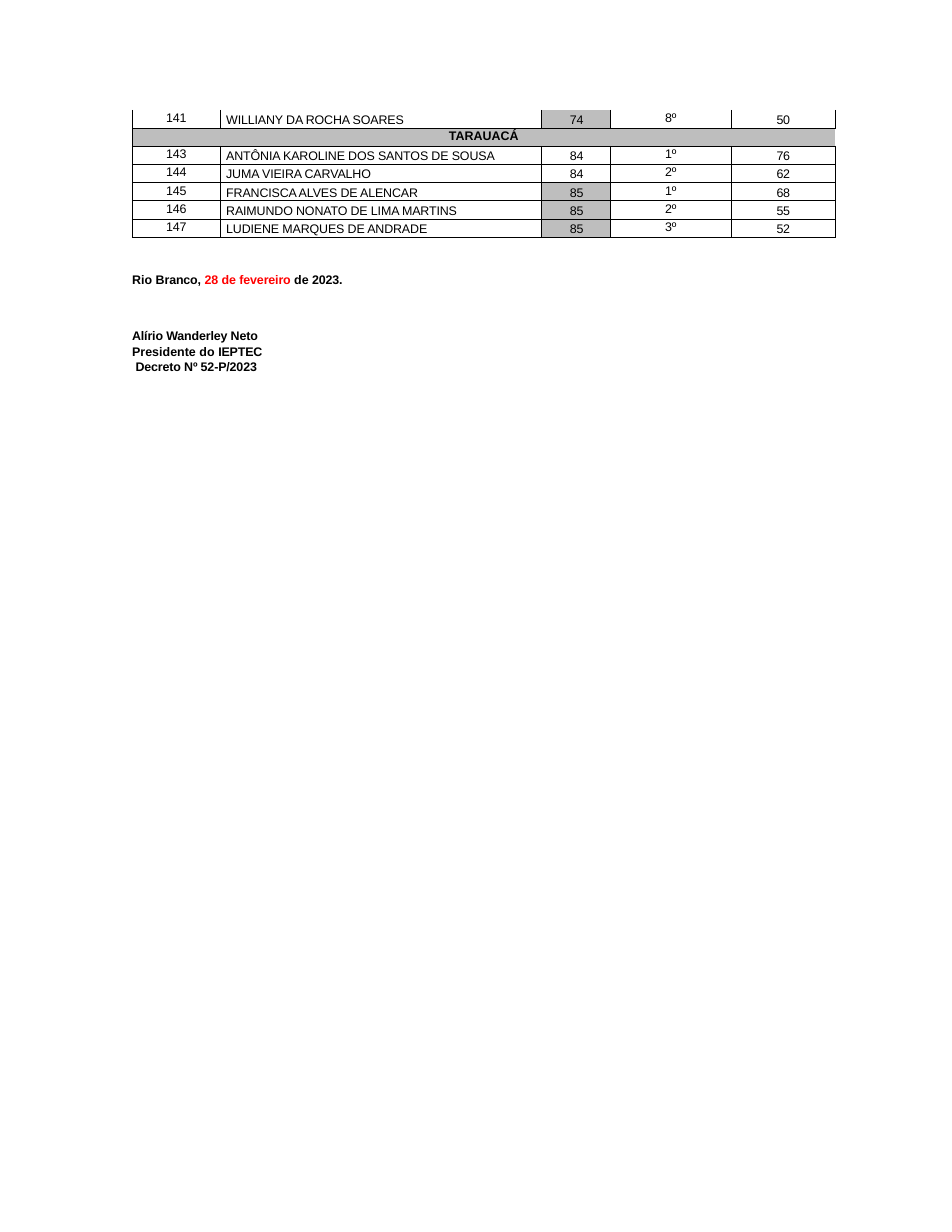
from lxml import etree
from pptx import Presentation
from pptx import util as u
from pptx.dml.color import RGBColor
from pptx.enum import text
from pptx.oxml.ns import qn

COLORS = {"ink": "000000", "red": "FF0000", "gray": "BEBEBE"}
COLS, ROWS = 85, 110
WIDTHS = [7.9, 28.6, 6.2, 10.8, 9.3]
CENTER, LEFT, RIGHT = text.PP_ALIGN.CENTER, text.PP_ALIGN.LEFT, text.PP_ALIGN.RIGHT
ALIGNS = [CENTER, LEFT, RIGHT, CENTER, CENTER]
PEOPLE = [
    ("141", "WILLIANY DA ROCHA SOARES", "74", "8º", "50"),
    ("TARAUACÁ",),
    ("143", "ANTÔNIA KAROLINE DOS SANTOS DE SOUSA", "84", "1º", "76"),
    ("144", "JUMA VIEIRA CARVALHO", "84", "2º", "62"),
    ("145", "FRANCISCA ALVES DE ALENCAR", "85", "1º", "68"),
    ("146", "RAIMUNDO NONATO DE LIMA MARTINS", "85", "2º", "55"),
    ("147", "LUDIENE MARQUES DE ANDRADE", "85", "3º", "52"),
]
SHADED = {"141", "145", "146", "147"}


class Page:
    """Holds the text style and the current slide, measured on a grid of columns and rows."""

    def __init__(self, prs):
        self.prs = prs
        self.s = prs.slides.add_slide(prs.slide_layouts[6])
        self.font = {"name": "Arial", "size": u.Pt(8)}

    def x(self, cols):
        return round(self.prs.slide_width * cols / COLS)

    def y(self, rows):
        return round(self.prs.slide_height * rows / ROWS)

    def apply(self, obj, values):
        for name, value in values.items():
            setattr(obj, name, value)

    def run(self, p, words, color="ink", bold=False, spc=-10):
        r = p.add_run()
        r.text = words
        self.apply(r.font, {**self.font, "bold": bold})
        r.font.color.rgb = RGBColor.from_string(COLORS[color])
        r._r.get_or_add_rPr().set("spc", str(spc))

    def text_box(self, at, paragraphs):
        left, top, width, height = at
        sp = self.s.shapes.add_textbox(self.x(left), self.y(top), self.x(width), self.y(height))
        tf = sp.text_frame
        self.apply(tf, {"word_wrap": True, "margin_left": 0, "margin_right": 0,
                        "margin_top": self.y(0.1), "margin_bottom": 0,
                        "auto_size": text.MSO_AUTO_SIZE.SHAPE_TO_FIT_TEXT})
        for i, runs in enumerate(paragraphs):
            p = tf.add_paragraph() if i else tf.paragraphs[0]
            p._p.get_or_add_pPr().set("marL", str(self.x(0.1)))
            self.apply(p, {"line_spacing": 1.04} if i else {"space_before": u.Pt(1)})
            for words, values in runs:
                self.run(p, words, bold=True, **values)

    def borders(self, cell, hidden):
        tcPr = cell._tc.get_or_add_tcPr()
        for side in "LRTB":
            ln = etree.SubElement(tcPr, qn(f"a:ln{side}"), w=str(u.Pt(0.5)))
            if side in hidden:
                etree.SubElement(ln, qn("a:noFill"))
            else:
                fill = etree.SubElement(ln, qn("a:solidFill"))
                etree.SubElement(fill, qn("a:srgbClr"), val=COLORS["ink"])

    def cell(self, cell, words, align, shaded, bold, exact, hidden):
        self.borders(cell, hidden)
        if shaded:
            cell.fill.solid()
            cell.fill.fore_color.rgb = RGBColor.from_string(COLORS["gray"])
        else:
            cell.fill.background()
        self.apply(cell, {"margin_left": self.x(0.5) if align == LEFT else 0,
                          "margin_right": self.x(2.4) if align == RIGHT else 0,
                          "margin_top": self.y(0.3 if exact else 0.1), "margin_bottom": 0})
        p = cell.text_frame.paragraphs[0]
        self.apply(p, {"alignment": align, "space_before": u.Pt(1.8 if exact else 0.8)})
        if exact:
            p.line_spacing = u.Pt(8.9)
        if words:
            self.run(p, words, bold=bold, spc=0 if bold else -10)

    def table(self, left, top, height, records):
        gf = self.s.shapes.add_table(len(records), len(WIDTHS), self.x(left), self.y(top),
                                     self.x(sum(WIDTHS)), self.y(height))
        tbl = gf.table
        self.apply(tbl, {"first_row": False, "horz_banding": False})
        for col, width in zip(tbl.columns, WIDTHS):
            col.width = self.x(width)
        for i, record in enumerate(records):
            band = len(record) == 1
            tbl.rows[i].height = self.y(height / len(records))
            if band:
                tbl.cell(i, 0).merge(tbl.cell(i, len(WIDTHS) - 1))
            for j, align in enumerate(ALIGNS):
                self.cell(tbl.cell(i, j), record[j] if j < len(record) else "",
                          CENTER if band else align,
                          shaded=band or (j == 2 and record[0] in SHADED),
                          bold=band, exact=not band and j in (1, 2, 4),
                          hidden="R" if band else "" if i else "T")


def main():
    prs = Presentation()
    prs.slide_width, prs.slide_height = u.Inches(8.5), u.Inches(11)
    page = Page(prs)
    page.table(11.8, 9.8, 11.4, PEOPLE)
    page.text_box((11.7, 24.2, 19.4, 1.6), [[
        ("Rio ", {"spc": 0}), ("Branco, ", {}), ("28 ", {"color": "red"}),
        ("de", {"color": "red", "spc": 0}), (" fevereiro ", {"color": "red"}),
        ("de", {"spc": 0}), (" 2023.", {})]])
    page.text_box((11.7, 29.2, 19, 4.2), [
        [("Alírio Wanderley Neto", {})],
        [("Presidente do ", {"spc": 0}), ("IEPTEC", {})],
        [(" ", {"spc": -200}), ("Decreto Nº 52-P/2023", {})]])
    prs.save("out.pptx")


if __name__ == "__main__":
    main()
